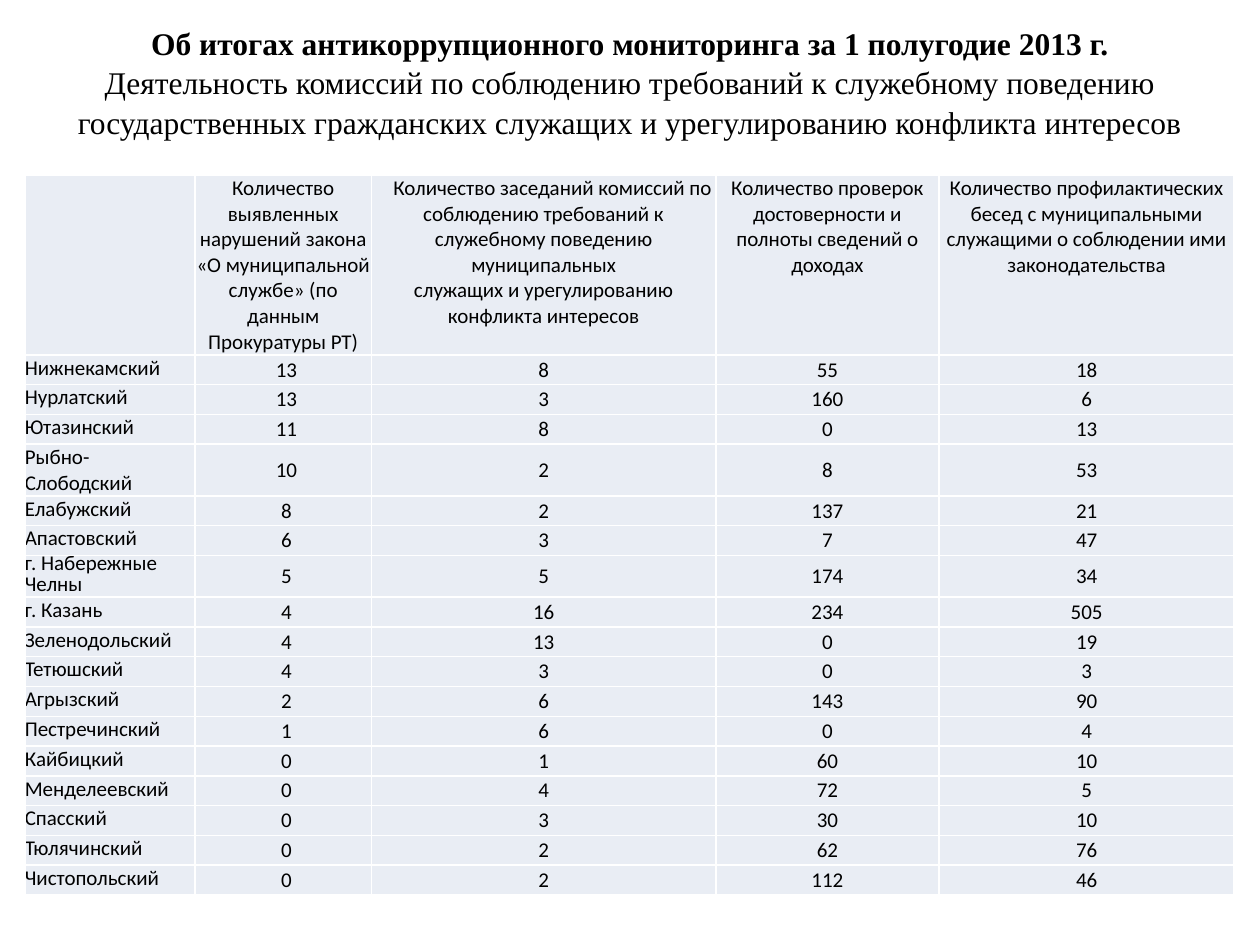
from dataclasses import dataclass

from lxml.etree import SubElement
from pptx import Presentation
from pptx.dml.color import RGBColor as RGB
from pptx.enum.text import MSO_ANCHOR as Anchor, MSO_AUTO_SIZE as AutoSize, PP_ALIGN as Align
from pptx.oxml.ns import qn
from pptx.util import Cm, Pt


@dataclass(frozen=True)
class Theme:
    text: str = "000000"
    cell: str = "E9EDF4"
    border: str = "FFFFFF"
    title_font: str = "Times New Roman"
    table_font: str = "Calibri"
    title_size: int = 18
    table_size: int = 12
    row_spacing: float = 14.8
    tight_spacing: float = 11.9


@dataclass(frozen=True)
class Column:
    width: float
    margin: float  # left margin of the body paragraphs, cm
    header: tuple[str, ...] = ()


@dataclass(frozen=True)
class District:
    name: str
    counts: tuple[int, ...]
    height: float = 0.6
    tight: bool = False


THEME = Theme()
HANGING = -1.24
HEADER_HEIGHT = 3.58

TITLE = "Об итогах антикоррупционного мониторинга за 1 полугодие 2013 г. "
SUBTITLE = ("Деятельность комиссий по соблюдению требований к служебному поведению "
            "государственных гражданских служащих и урегулированию конфликта интересов")

COLUMNS = [
    Column(3.43, 0.2),
    Column(3.56, 1.37, ("Количество выявленных нарушений закона «О муниципальной службе» "
                        "(по данным Прокуратуры РТ)",)),
    Column(6.94, 0, ("Количество заседаний комиссий по соблюдению требований к служебному "
                     "поведению муниципальных",
                     "служащих и урегулированию конфликта интересов")),
    Column(4.5, 1.12, ("Количество проверок достоверности и полноты сведений о доходах",)),
    Column(5.95, 1.19, ("Количество профилактических бесед с муниципальными служащими "
                        "о соблюдении ими законодательства",)),
]

DISTRICTS = [
    District("Нижнекамский", (13, 8, 55, 18)),
    District("Нурлатский", (13, 3, 160, 6)),
    District("Ютазинский", (11, 8, 0, 13)),
    District("Рыбно-\nСлободский", (10, 2, 8, 53), height=1.04),
    District("Елабужский", (8, 2, 137, 21)),
    District("Апастовский", (6, 3, 7, 47)),
    District("г. Набережные\nЧелны", (5, 5, 174, 34), height=0.84, tight=True),
    District("г. Казань", (4, 16, 234, 505)),
    District("Зеленодольский", (4, 13, 0, 19)),
    District("Тетюшский", (4, 3, 0, 3)),
    District("Агрызский", (2, 6, 143, 90)),
    District("Пестречинский", (1, 6, 0, 4)),
    District("Кайбицкий", (0, 1, 60, 10)),
    District("Менделеевский", (0, 4, 72, 5)),
    District("Спасский", (0, 3, 30, 10)),
    District("Тюлячинский", (0, 2, 62, 76)),
    District("Чистопольский", (0, 2, 112, 46)),
]


def add_text(p, text: str, *, font: str = THEME.table_font, size: float = THEME.table_size,
             bold: bool = False, align=Align.LEFT, spacing=None,
             margin: float = 0, indent: float = 0) -> None:
    """Add a formatted run to a paragraph; margin and indent are in cm."""
    r = p.add_run()
    r.text = text
    r.font.name, r.font.size, r.font.bold = font, Pt(size), bold
    r.font.color.rgb = RGB.from_string(THEME.text)
    p.alignment = align
    if spacing is not None:
        p.line_spacing = spacing
    pPr = p._p.get_or_add_pPr()
    pPr.set("marL", str(Cm(margin)))
    pPr.set("indent", str(Cm(indent)))


def style_cell(cell, anchor=Anchor.TOP) -> None:
    """Give a cell no insets, white borders and the table fill."""
    cell.margin_left = cell.margin_right = cell.margin_top = cell.margin_bottom = 0
    cell.vertical_anchor = anchor
    tcPr = cell._tc.get_or_add_tcPr()
    for side in ("a:lnL", "a:lnR", "a:lnT", "a:lnB"):
        ln = SubElement(tcPr, qn(side), w=str(Pt(1)))
        SubElement(SubElement(ln, qn("a:solidFill")), qn("a:srgbClr"), val=THEME.border)
    cell.fill.solid()
    cell.fill.fore_color.rgb = RGB.from_string(THEME.cell)


def fill_cell(cell, lines, **fmt) -> None:
    """Write one paragraph per line."""
    tf = cell.text_frame
    for i, line in enumerate(lines):
        add_text(tf.add_paragraph() if i else tf.paragraphs[0], line, **fmt)


def add_title(slide) -> None:
    sp = slide.shapes.title
    sp.left, sp.top, sp.width, sp.height = Cm(1.27), Cm(0.76), Cm(22.86), Cm(3.18)
    tf = sp.text_frame
    tf.word_wrap, tf.auto_size = True, AutoSize.NONE
    tf.vertical_anchor = Anchor.MIDDLE
    tf.margin_bottom = Cm(1.55)  # lifts the text clear of the table
    p = tf.paragraphs[0]
    for text, bold in ((TITLE, True), (SUBTITLE, False)):
        add_text(p, text, font=THEME.title_font, size=THEME.title_size, bold=bold,
                 align=Align.CENTER, spacing=1.05)


def add_district_table(slide) -> None:
    heights = [HEADER_HEIGHT] + [d.height for d in DISTRICTS]
    table = slide.shapes.add_table(
        len(heights), len(COLUMNS), Cm(0.5), Cm(3.54),
        Cm(sum(c.width for c in COLUMNS)), Cm(sum(heights))).table
    table.first_row = table.horz_banding = False
    for row, height in zip(table.rows, heights):
        row.height = Cm(height)

    # Header row
    for i, col in enumerate(COLUMNS):
        table.columns[i].width = Cm(col.width)
        cell = table.cell(0, i)
        style_cell(cell)
        two_part = len(col.header) > 1
        fill_cell(cell, col.header, align=Align.CENTER, indent=HANGING)
        if two_part:
            cell.text_frame.paragraphs[0]._p.get_or_add_pPr().set("indent", str(Cm(0.36)))

    # District rows
    for r, d in enumerate(DISTRICTS, 1):
        for c, (col, value) in enumerate(zip(COLUMNS, (d.name, *d.counts))):
            cell = table.cell(r, c)
            is_name = c == 0
            spacing = THEME.tight_spacing if is_name and d.tight else THEME.row_spacing
            style_cell(cell, Anchor.TOP if is_name else Anchor.MIDDLE)
            fill_cell(cell, str(value).split("\n"), spacing=Pt(spacing),
                      align=Align.LEFT if is_name else Align.CENTER,
                      margin=col.margin, indent=HANGING)


def main() -> None:
    prs = Presentation()
    prs.slide_width, prs.slide_height = Cm(25.4), Cm(19.05)
    slide = prs.slides.add_slide(prs.slide_layouts[5])
    add_title(slide)
    add_district_table(slide)
    prs.save("out.pptx")


if __name__ == "__main__":
    main()
